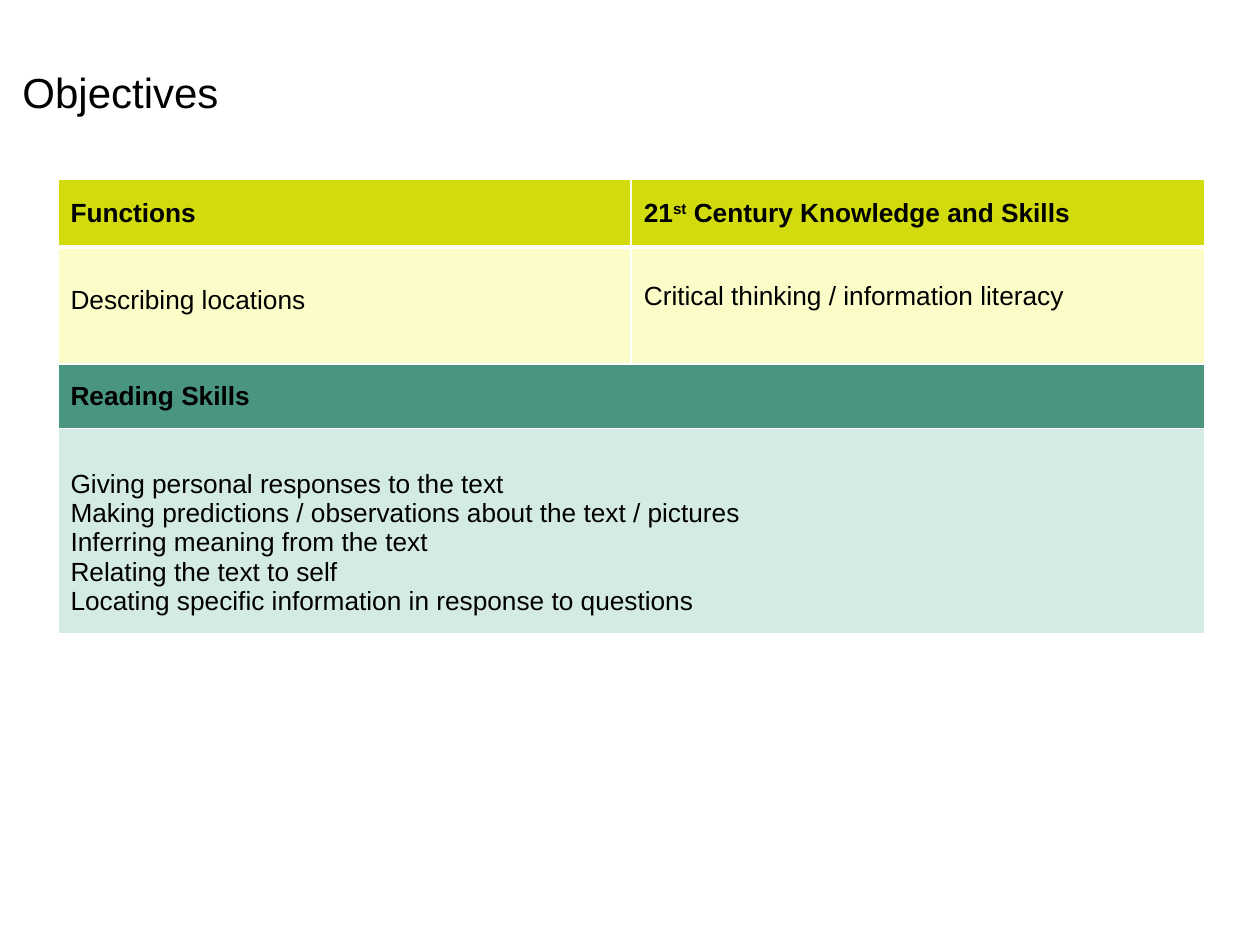
from lxml.etree import SubElement
from pptx import Presentation
from pptx.dml.color import RGBColor
from pptx.enum.text import MSO_ANCHOR
from pptx.oxml.ns import qn
from pptx.util import Inches, Pt

BLACK = RGBColor(0x00, 0x00, 0x00)
WHITE = RGBColor(0xFF, 0xFF, 0xFF)
LIME = RGBColor(0xD2, 0xDB, 0x0E)
CREAM = RGBColor(0xFB, 0xFC, 0xC8)
GREEN = RGBColor(0x49, 0x95, 0x80)
MINT = RGBColor(0xD4, 0xEA, 0xE4)

SLIDE_WIDTH, SLIDE_HEIGHT = 10, 7.5
ROW_HEIGHTS = (0.54, 0.93, 0.51, 1.6)
READING_SKILLS = (
    "Giving personal responses to the text",
    "Making predictions / observations about the text / pictures",
    "Inferring meaning from the text",
    "Relating the text to self",
    "Locating specific information in response to questions",
)


def write_text(frame, lines, size=15, bold=False, anchor=MSO_ANCHOR.MIDDLE):
    """Write one paragraph a line; a line is a string or (text, baseline) runs."""
    frame.vertical_anchor = anchor
    for index, line in enumerate(lines):
        paragraph = frame.add_paragraph() if index else frame.paragraphs[0]
        for text, baseline in [(line, 0)] if isinstance(line, str) else line:
            run = paragraph.add_run()
            run.text = text
            run.font.name = "Arial"
            run.font.size = Pt(size)
            run.font.bold = bold
            run.font.color.rgb = BLACK
            if baseline:
                run.font._element.set("baseline", str(baseline * 1000))


def set_borders(cell, bottom=1):
    """Draw white borders, which must precede the fill in the cell properties."""
    properties = cell._tc.get_or_add_tcPr()
    for side, width in (("L", 1), ("R", 1), ("T", 1), ("B", bottom)):
        line = SubElement(properties, qn(f"a:ln{side}"), w=str(Pt(width)))
        fill = SubElement(line, qn("a:solidFill"))
        SubElement(fill, qn("a:srgbClr"), val=str(WHITE))


def fill_cell(cell, lines, color, top=None, **text_format):
    """Fill a cell; text with a top inset hangs from it, other text is centred."""
    cell.fill.solid()
    cell.fill.fore_color.rgb = color
    if top is not None:
        cell.margin_top = Inches(top)
        text_format["anchor"] = MSO_ANCHOR.TOP
    write_text(cell.text_frame, lines, **text_format)
    cell.vertical_anchor = text_format.get("anchor", MSO_ANCHOR.MIDDLE)


def add_title(slide, left, top, width, height):
    box = slide.shapes.add_textbox(*map(Inches, (left, top, width, height)))
    box.text_frame.word_wrap = True
    write_text(box.text_frame, ["Objectives"], size=24, anchor=MSO_ANCHOR.TOP)


def add_objectives_table(slide, left, top, width):
    frame = slide.shapes.add_table(
        len(ROW_HEIGHTS), 2, *map(Inches, (left, top, width, sum(ROW_HEIGHTS))))
    table = frame.table
    for column in table.columns:
        column.width = Inches(width / 2)
    for index, height in enumerate(ROW_HEIGHTS):
        table.rows[index].height = Inches(height)
        for cell in table.rows[index].cells:
            set_borders(cell, bottom=1 if index else 3)

    # Functions and knowledge, side by side
    skills_heading = [("21", 0), ("st", 30), (" Century Knowledge and Skills", 0)]
    fill_cell(table.cell(0, 0), ["Functions"], LIME, bold=True)
    fill_cell(table.cell(0, 1), [skills_heading], LIME, bold=True)
    fill_cell(table.cell(1, 0), ["Describing locations"], CREAM, top=0.31)
    fill_cell(table.cell(1, 1), ["Critical thinking / information literacy"],
              CREAM, top=0.28)

    # Reading skills, across both columns
    for row in (2, 3):
        table.cell(row, 0).merge(table.cell(row, 1))
    fill_cell(table.cell(2, 0), ["Reading Skills"], GREEN, bold=True)
    fill_cell(table.cell(3, 0), READING_SKILLS, MINT, top=0.33)


def main():
    presentation = Presentation()
    presentation.slide_width = Inches(SLIDE_WIDTH)
    presentation.slide_height = Inches(SLIDE_HEIGHT)
    slide = presentation.slides.add_slide(presentation.slide_layouts[6])
    slide.background.fill.solid()
    slide.background.fill.fore_color.rgb = WHITE
    add_title(slide, 0.08, 0.48, 1.77, 0.5)
    add_objectives_table(slide, 0.46, 1.42, 0.91 * SLIDE_WIDTH)
    presentation.save("out.pptx")


if __name__ == "__main__":
    main()
